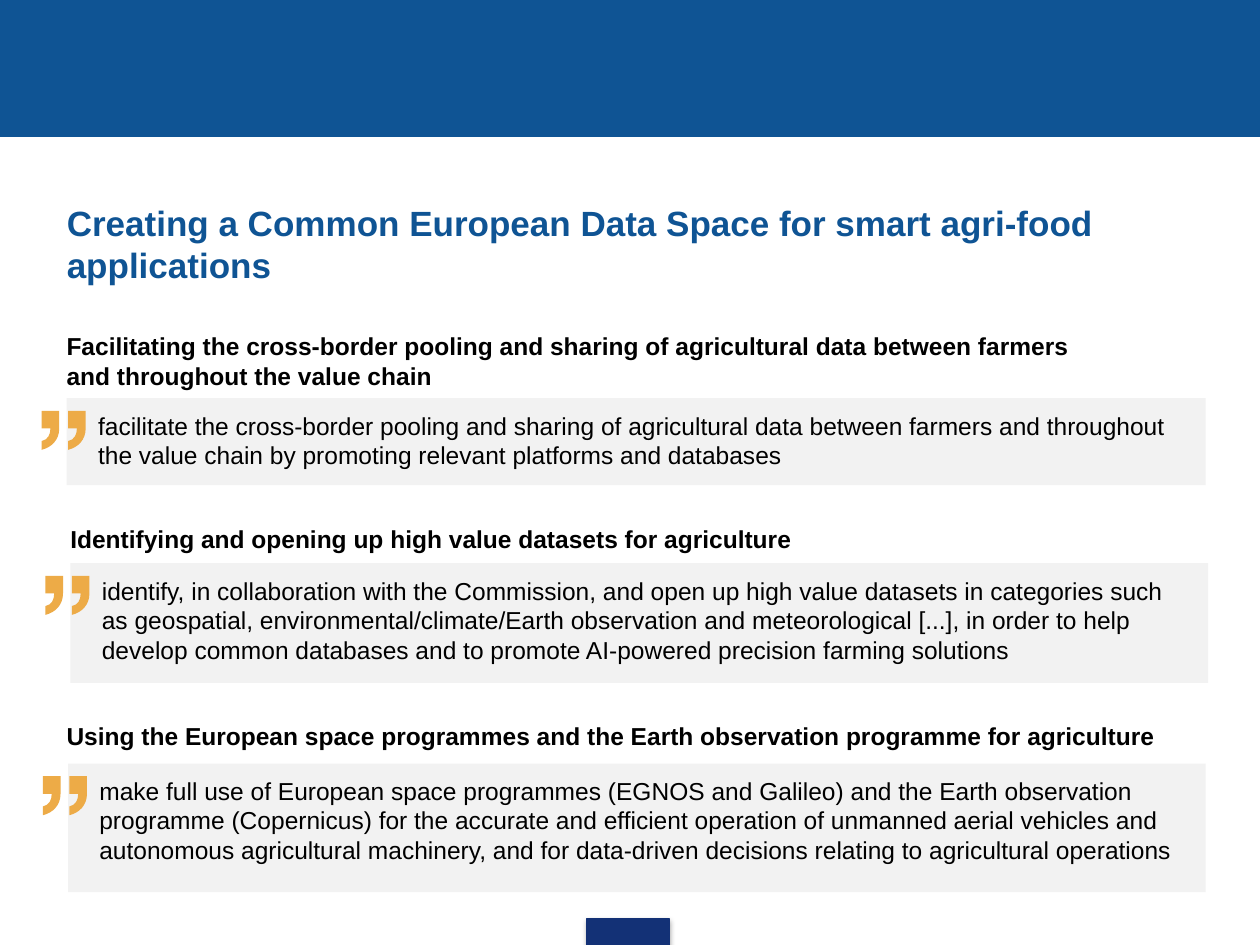
from lxml import etree
from pptx import Presentation
from pptx.dml.color import RGBColor
from pptx.enum.shapes import MSO_SHAPE
from pptx.enum.text import MSO_ANCHOR, MSO_AUTO_SIZE, PP_ALIGN
from pptx.oxml.ns import qn
from pptx.util import Inches, Pt

RECTANGLE = MSO_SHAPE.RECTANGLE
TOP, MIDDLE = MSO_ANCHOR.TOP, MSO_ANCHOR.MIDDLE
NO_AUTOFIT = MSO_AUTO_SIZE.NONE
LEFT = PP_ALIGN.LEFT
BLUE = RGBColor(0x0F, 0x54, 0x94)
NAVY = RGBColor(0x13, 0x31, 0x76)
GREY = RGBColor(0xF2, 0xF2, 0xF2)
AMBER = RGBColor(0xED, 0xAB, 0x47)
BLACK = RGBColor(0, 0, 0)

TITLE_FONT = {"name": "Arial", "size": Pt(20), "bold": True}
HEADING_FONT = {"name": "Arial", "size": Pt(14), "bold": True}
QUOTE_FONT = {"name": "Arial", "size": Pt(14), "bold": False}

MARK_WIDTH, MARK_HEIGHT, MARK_STEP = 0.35, 0.31, 0.21
MARK_CORNERS = [(0, 0), (0.14, 0), (0.14, 0.14), (0, 0.31), (0, 0.24), (0.07, 0.14), (0, 0.14)]
MARK_CURVES = {2: [(0.14, 0.23), (0.08, 0.29)], 4: [(0.05, 0.23), (0.07, 0.19)]}

SECTIONS = [
    {
        "heading": "Facilitating the cross-border pooling and sharing of agricultural data "
                   "between farmers and throughout the value chain",
        "heading_box": (0.43, 2.58, 8.47, 0.53),
        "quote": "facilitate the cross-border pooling and sharing of agricultural data between "
                 "farmers and throughout the value chain by promoting relevant platforms and "
                 "databases",
        "panel_box": (0.53, 3.16, 9.04, 0.69),
        "quote_height": 0.61,
    },
    {
        "heading": "Identifying and opening up high value datasets for agriculture",
        "heading_box": (0.46, 4.11, 8.47, 0.41),
        "quote": "identify, in collaboration with the Commission, and open up high value datasets "
                 "in categories such as geospatial, environmental/climate/Earth observation and "
                 "meteorological [...], in order to help develop common databases and to promote "
                 "AI-powered precision farming solutions",
        "panel_box": (0.56, 4.47, 9.03, 0.95),
        "quote_height": 0.81,
    },
    {
        "heading": "Using the European space programmes and the Earth observation programme for "
                   "agriculture",
        "heading_box": (0.43, 5.67, 9.13, 0.41),
        "quote": "make full use of European space programmes (EGNOS and Galileo) and the Earth "
                 "observation programme (Copernicus) for the accurate and efficient operation of "
                 "unmanned aerial vehicles and autonomous agricultural machinery, and for "
                 "data-driven decisions relating to agricultural operations",
        "panel_box": (0.54, 6.06, 9.03, 1.02),
        "quote_height": 0.81,
    },
]


def to_lengths(box):
    """Turn a box of numbers into lengths."""
    return [Inches(value) for value in box]


def fill_text(shape, text, font_format, color, anchor):
    """Write one left-aligned paragraph into a shape."""
    frame = shape.text_frame
    frame_format = {"text": text, "word_wrap": True, "auto_size": NO_AUTOFIT,
                    "vertical_anchor": anchor}
    for name, value in frame_format.items():
        setattr(frame, name, value)
    paragraph = frame.paragraphs[0]
    paragraph.alignment = LEFT
    for name, value in font_format.items():
        setattr(paragraph.font, name, value)
    paragraph.font.color.rgb = color


def paint(shape, color, outlined=False):
    """Fill a shape, without shadow, and outline it if asked."""
    shape.shadow.inherit = False
    shape.fill.solid()
    shape.fill.fore_color.rgb = color
    if outlined:
        shape.line.color.rgb = color
        shape.line.width = Pt(0.75)
    else:
        shape.line.fill.background()


def add_panel(slide, box, color, outlined=False):
    """Add a plain rectangle."""
    shape = slide.shapes.add_shape(RECTANGLE, *to_lengths(box))
    paint(shape, color, outlined)
    return shape


def add_shadow(shape):
    """Give a shape a soft shadow below it."""
    effects = shape._element.spPr.find(qn("a:effectLst"))
    shadow = etree.SubElement(effects, qn("a:outerShdw"), blurRad=str(Pt(3.1)),
                              dist=str(Pt(1.8)), dir="5400000", rotWithShape="0")
    color = etree.SubElement(shadow, qn("a:srgbClr"), val="000000")
    etree.SubElement(color, qn("a:alpha"), val="35000")


def turn_point(point, offset):
    """Return a quotation mark point turned by half a circle, as lengths."""
    x, y = point
    return Inches(MARK_WIDTH - offset - x), Inches(MARK_HEIGHT - y)


def add_quote_mark(slide, left, top):
    """Add a double quotation mark as one curved outline, turned by half a circle."""
    offsets = (MARK_STEP, 0)
    builder = slide.shapes.build_freeform(scale=1.0)
    for offset in offsets:
        points = [turn_point(corner, offset) for corner in MARK_CORNERS]
        builder.move_to(*points[0])
        builder.add_line_segments(points[1:], close=True)
    shape = builder.convert_to_shape(Inches(left), Inches(top))
    segments = list(shape._element.spPr.iter(qn("a:lnTo")))
    segment_count = len(MARK_CORNERS) - 1
    for mark, offset in enumerate(offsets):
        for index, controls in MARK_CURVES.items():
            segment = segments[mark * segment_count + index]
            curve = etree.Element(qn("a:cubicBezTo"))
            for control in controls:
                x, y = turn_point(control, offset)
                etree.SubElement(curve, qn("a:pt"), x=str(x), y=str(y))
            curve.append(segment[0])
            segment.getparent().replace(segment, curve)
    shape.left, shape.top = Inches(left), Inches(top)
    shape.rotation = 180
    paint(shape, AMBER)


def add_section(slide, heading, heading_box, quote, panel_box, quote_height):
    """Add a heading above a panel that holds a quotation."""
    left, top = panel_box[:2]
    add_panel(slide, panel_box, GREY)
    add_quote_mark(slide, left - 0.2, top + 0.1)
    quote_box = (left + 0.15, top + 0.05, 8.75, quote_height)
    for text, box, font_format in ((quote, quote_box, QUOTE_FONT),
                                   (heading, heading_box, HEADING_FONT)):
        text_box = slide.shapes.add_textbox(*to_lengths(box))
        fill_text(text_box, text, font_format, BLACK, TOP)


def add_frame(slide):
    """Add the band at the top and the tab at the bottom."""
    add_panel(slide, (0, 0, 10, 1.08), BLUE, outlined=True)
    add_shadow(add_panel(slide, (4.66, 7.29, 0.65, 0.21), NAVY, outlined=True))


def set_title(slide, box):
    """Place and format the title."""
    title = slide.shapes.title
    for name, value in zip(("left", "top", "width", "height"), to_lengths(box)):
        setattr(title, name, value)
    fill_text(title, "Creating a Common European Data Space for smart agri-food applications",
              TITLE_FONT, BLUE, MIDDLE)


def main():
    """Build the slide and save it."""
    presentation = Presentation()
    presentation.slide_width = Inches(10)
    presentation.slide_height = Inches(7.5)
    slide = presentation.slides.add_slide(presentation.slide_layouts[5])
    add_frame(slide)
    set_title(slide, (0.43, 1.53, 9, 0.81))
    for section in SECTIONS:
        add_section(slide, **section)
    presentation.save("out.pptx")


if __name__ == "__main__":
    main()
